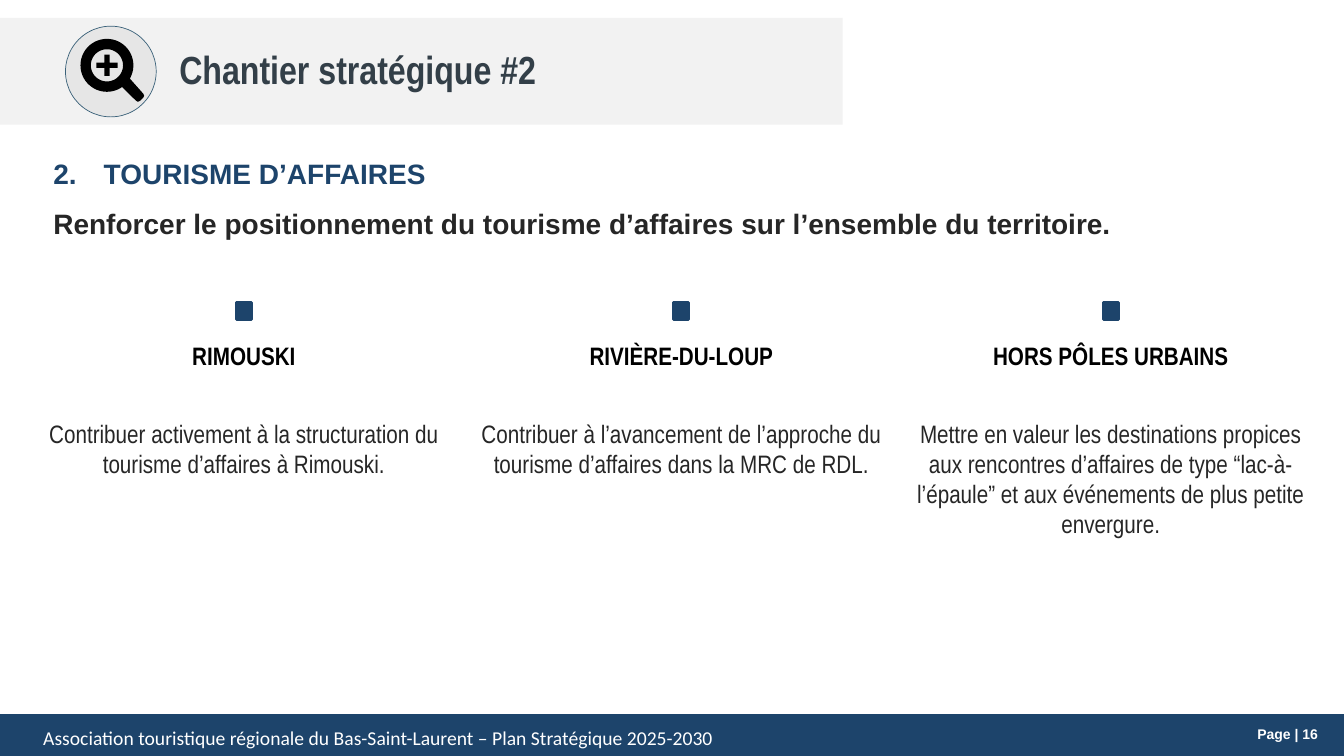
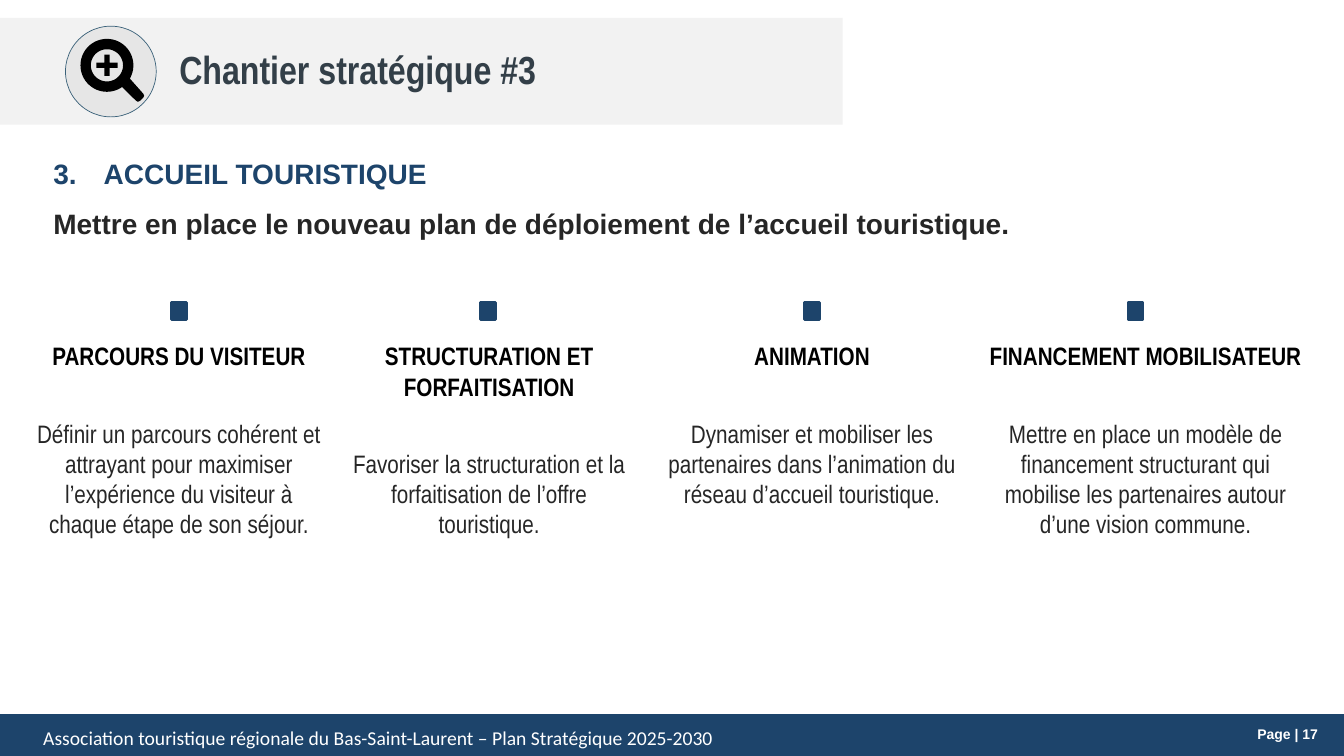
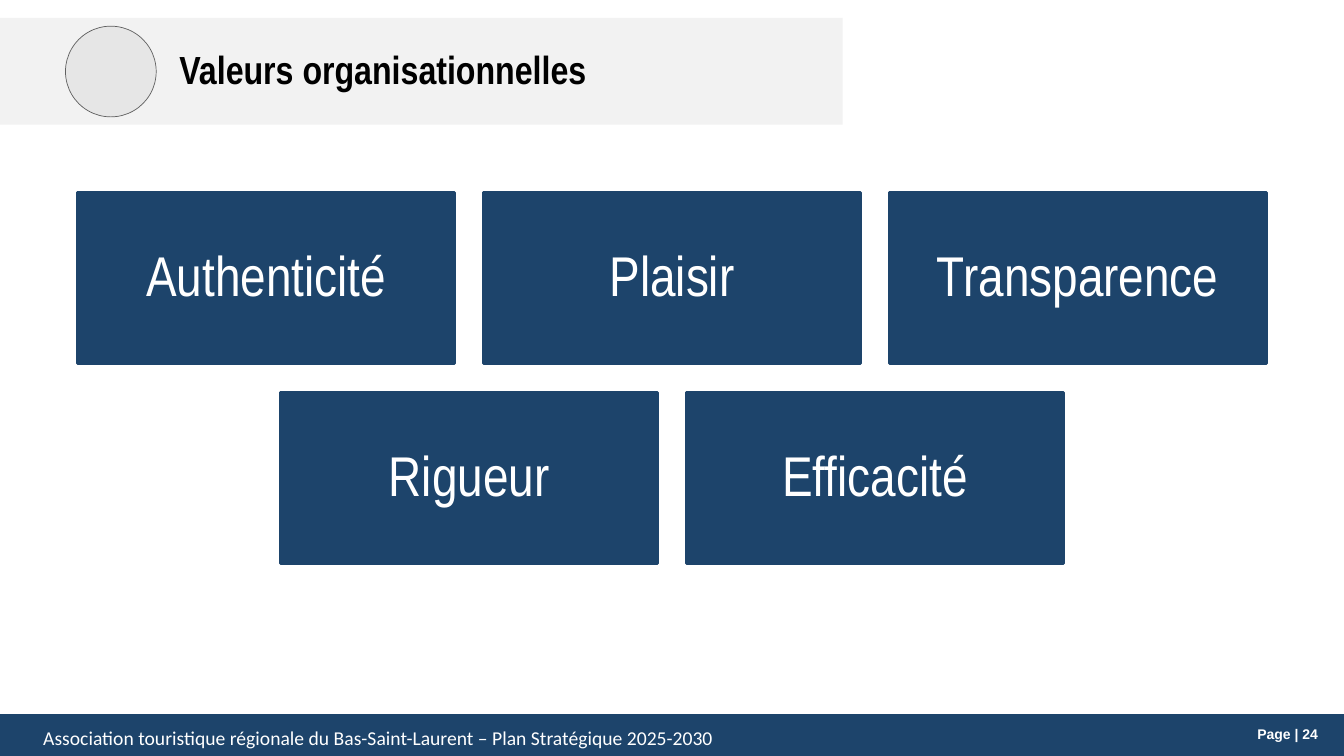
import math
from dataclasses import dataclass
from typing import Optional

import pptx
import pptx.dml.color
import pptx.enum.shapes
import pptx.enum.text
import pptx.oxml
import pptx.oxml.ns
import pptx.util

Pt = pptx.util.Pt
Kind = pptx.enum.shapes.MSO_SHAPE
Align = pptx.enum.text.PP_ALIGN
Anchor = pptx.enum.text.MSO_ANCHOR

WIDE, HIGH = 960, 540
NARROW, ARIAL, CALIBRI = "Arial Narrow", "Arial", "Calibri"
COLORS = {
    "navy": "1D446B",
    "white": "FFFFFF",
    "band": "F2F2F2",
    "disc": "E6E6E6",
    "steel": "3A6179",
    "gray": "606060",
    "slate": "333F48",
    "black": "000000",
    "ink": "262626",
}


@dataclass(frozen=True)
class Box:
    left: float
    top: float
    width: float
    height: float


@dataclass(frozen=True)
class Style:
    font: str
    size: float
    color: str
    bold: bool = False


@dataclass(frozen=True)
class Column:
    left: float
    width: float
    head: str
    body: str
    shift: float = 0


@dataclass(frozen=True)
class Topic:
    number: int
    page: int
    name: str
    goal: str
    columns: tuple[Column, ...]


FOOTER = Style(CALIBRI, 14, "white")
PAGE = Style(ARIAL, 10, "white", True)
NAME = Style(ARIAL, 20, "navy", True)
GOAL = Style(ARIAL, 20, "ink", True)
HEAD = Style(NARROW, 18, "black", True)
BODY = Style(NARROW, 18, "ink")
VALUE = Style(NARROW, 40, "white")

TOPICS = (
    Topic(
        2, 16, "TOURISME D’AFFAIRES",
        "Renforcer le positionnement du tourisme d’affaires sur l’ensemble du territoire.",
        (
            Column(20.2, 308, "RIMOUSKI",
                   "Contribuer activement à la structuration du tourisme d’affaires à Rimouski."),
            Column(326.2, 321, "RIVIÈRE-DU-LOUP",
                   "Contribuer à l’avancement de l’approche du tourisme d’affaires dans la MRC de RDL."),
            Column(639.4, 308, "HORS PÔLES URBAINS",
                   "Mettre en valeur les destinations propices aux rencontres d’affaires de type "
                   "“lac-à-l’épaule” et aux événements de plus petite envergure."),
        ),
    ),
    Topic(
        3, 17, "ACCUEIL TOURISTIQUE",
        "Mettre en place le nouveau plan de déploiement de l’accueil touristique.",
        (
            Column(14.4, 226.8, "PARCOURS DU VISITEUR",
                   "Définir un parcours cohérent et attrayant pour maximiser l’expérience "
                   "du visiteur à chaque étape de son séjour."),
            Column(236, 226.8, "STRUCTURATION ET FORFAITISATION",
                   "Favoriser la structuration et la forfaitisation de l’offre touristique.", -0.7),
            Column(466.6, 226.8, "ANIMATION",
                   "Dynamiser et mobiliser les partenaires dans l’animation du réseau "
                   "d’accueil touristique."),
            Column(697, 242.6, "FINANCEMENT MOBILISATEUR",
                   "Mettre en place un modèle de financement structurant qui mobilise "
                   "les partenaires autour d’une vision commune.", -7.2),
        ),
    ),
)
VALUES = (("Authenticité", "Plaisir", "Transparence"), ("Rigueur", "Efficacité"))


def tint(name: str) -> pptx.dml.color.RGBColor:
    return pptx.dml.color.RGBColor.from_string(COLORS[name])


def paint(shape, fill: str, line: Optional[str], weight: float) -> None:
    shape.shadow.inherit = False
    shape.fill.solid()
    shape.fill.fore_color.rgb = tint(fill)
    if line is None:
        shape.line.fill.background()
    else:
        shape.line.color.rgb = tint(line)
        shape.line.width = Pt(weight)


def draw(slide, kind, box: Box, fill: str, line: Optional[str] = None, weight: float = 2):
    shape = slide.shapes.add_shape(
        kind, Pt(box.left), Pt(box.top), Pt(box.width), Pt(box.height))
    paint(shape, fill, line, weight)
    return shape


def write(para, text: str, style: Style, align=Align.LEFT) -> None:
    para.alignment = align
    run = para.add_run()
    run.text = text
    font = run.font
    font.name, font.size, font.bold = style.font, Pt(style.size), style.bold
    font.color.rgb = tint(style.color)


def frame(slide, box: Box):
    area = slide.shapes.add_textbox(
        Pt(box.left), Pt(box.top), Pt(box.width), Pt(box.height)).text_frame
    area.word_wrap = True
    return area


def label(slide, box: Box, text: str, style: Style, align=Align.LEFT) -> None:
    write(frame(slide, box).paragraphs[0], text, style, align)


def count(para, start: int) -> None:
    props = para._p.get_or_add_pPr()
    props.set("marL", str(Pt(36)))
    props.set("indent", str(Pt(-36)))
    mark = pptx.oxml.ns.qn("a:buAutoNum")
    props.append(props.makeelement(mark, {"type": "arabicPeriod", "startAt": str(start)}))


def arc(x: float, y: float, radius: float, start: int, end: int) -> list[tuple[float, float]]:
    return [(x + radius * math.cos(math.radians(a)), y + radius * math.sin(math.radians(a)))
            for a in range(start, end + 1, 5)]


def lens(slide) -> None:
    x, y, arm, half = 76.4, 46.7, 7.6, 1.9
    grip = [(102.4, 67), (103, 68.4), (102.4, 69.8), (100.1, 72), (98.6, 72.7), (97.2, 72)]
    rim = arc(x, y, 18.9, 55, 390) + grip
    hole = arc(x, y, 11.5, 0, 360)
    cross = [(x + a, y + b) for a, b in (
        (-arm, -half), (-half, -half), (-half, -arm), (half, -arm),
        (half, -half), (arm, -half), (arm, half), (half, half),
        (half, arm), (-half, arm), (-half, half), (-arm, half))]
    rings = [[(Pt(a), Pt(b)) for a, b in ring] for ring in (rim, hole, cross)]
    pen = slide.shapes.build_freeform(*rings[0][0])
    pen.add_line_segments(rings[0][1:])
    for ring in rings[1:]:
        pen.move_to(*ring[0])
        pen.add_line_segments(ring[1:])
    paint(pen.convert_to_shape(), "black", None, 0)


def base(deck, title: str, color: str, edge: str, page: int):
    slide = deck.slides.add_slide(deck.slide_layouts[6])
    draw(slide, Kind.RECTANGLE, Box(0, 511.2, WIDE, 28.8), "navy", "navy")
    label(slide, Box(883.4, 514.8, 65, 19.4), f"Page | {page}", PAGE, Align.RIGHT)
    label(slide, Box(23.8, 514.8, 775.4, 24.5),
          "Association touristique régionale du Bas-Saint-Laurent – Plan Stratégique 2025-2030",
          FOOTER)
    draw(slide, Kind.RECTANGLE, Box(0, 12.8, 602, 76.2), "band")
    draw(slide, Kind.OVAL, Box(46.8, 18.7, 64.8, 64.8), "disc", edge, 0.5)
    label(slide, Box(121, 28.8, 432.7, 41), title, Style(NARROW, 28, color, True))
    return slide


def plan(deck, topic: Topic) -> None:
    slide = base(deck, f"Chantier stratégique #{topic.number}", "slate", "steel", topic.page)
    lens(slide)
    intro = frame(slide, Box(31, 108, 897, 67.7))
    first, second = intro.paragraphs[0], intro.add_paragraph()
    count(first, topic.number)
    write(first, topic.name, NAME)
    write(second, topic.goal, GOAL)
    first.space_after = second.space_after = Pt(12)
    for col in topic.columns:
        mid = col.left + col.width / 2 + col.shift
        draw(slide, Kind.RECTANGLE, Box(mid - 5.4, 216, 10.8, 12.2), "navy", "navy")
        area = frame(slide, Box(col.left, 239.8, col.width, 150))
        write(area.paragraphs[0], col.head, HEAD, Align.CENTER)
        body = area.add_paragraph()
        body.space_before = Pt(33.5)
        write(body, col.body, BODY, Align.CENTER)


def grid(deck) -> None:
    slide = base(deck, "Valeurs organisationnelles", "black", "gray", 24)
    width, height, gap = 269.4, 122.4, 20.4
    for row, names in enumerate(VALUES):
        start = (WIDE - len(names) * (width + gap) + gap) / 2
        for col, name in enumerate(names):
            box = Box(start + col * (width + gap), 137.5 + row * (height + gap), width, height)
            area = draw(slide, Kind.RECTANGLE, box, "navy", "navy").text_frame
            area.word_wrap = True
            area.vertical_anchor = Anchor.MIDDLE
            area.margin_left = area.margin_right = Pt(12.2)
            area.margin_top = area.margin_bottom = Pt(12.2)
            area.paragraphs[0].line_spacing = 0.9
            write(area.paragraphs[0], name, VALUE, Align.CENTER)


def main() -> None:
    deck = pptx.Presentation()
    deck.slide_width, deck.slide_height = Pt(WIDE), Pt(HIGH)
    for topic in TOPICS:
        plan(deck, topic)
    grid(deck)
    deck.save("out.pptx")


if __name__ == "__main__":
    main()
